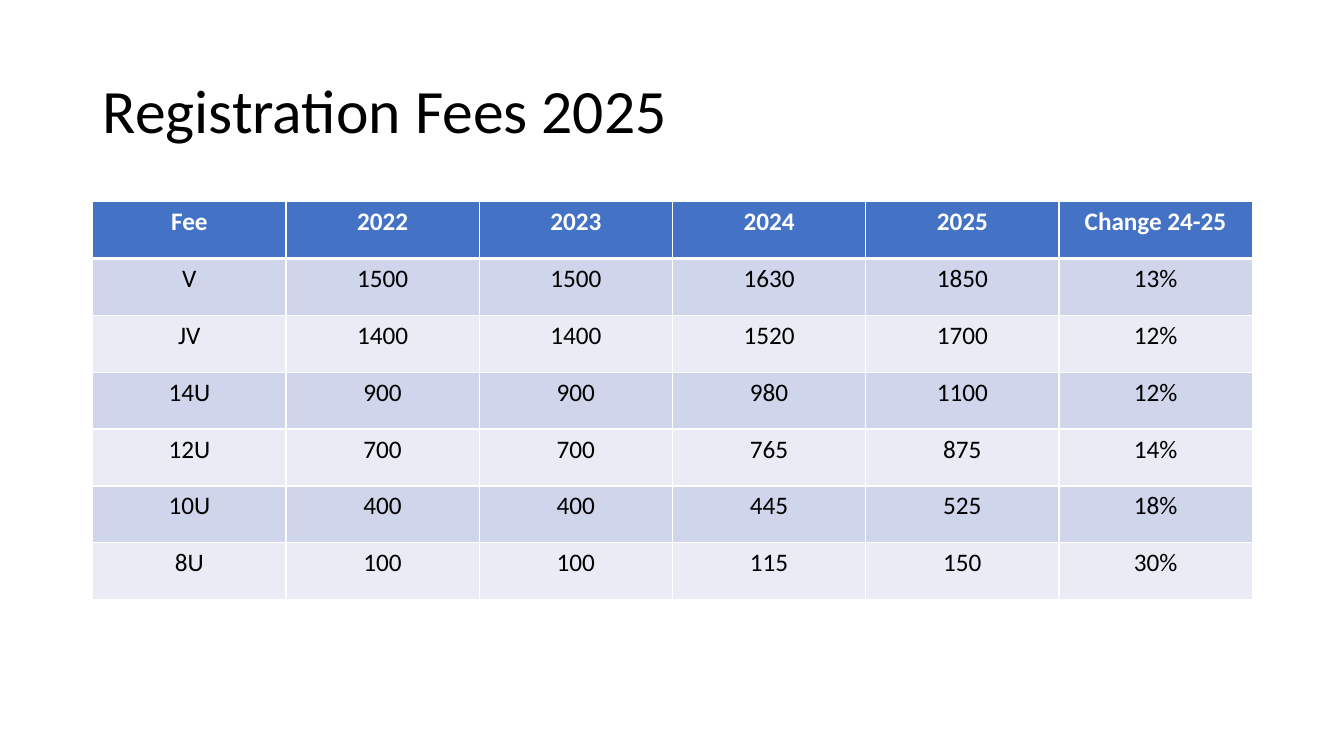
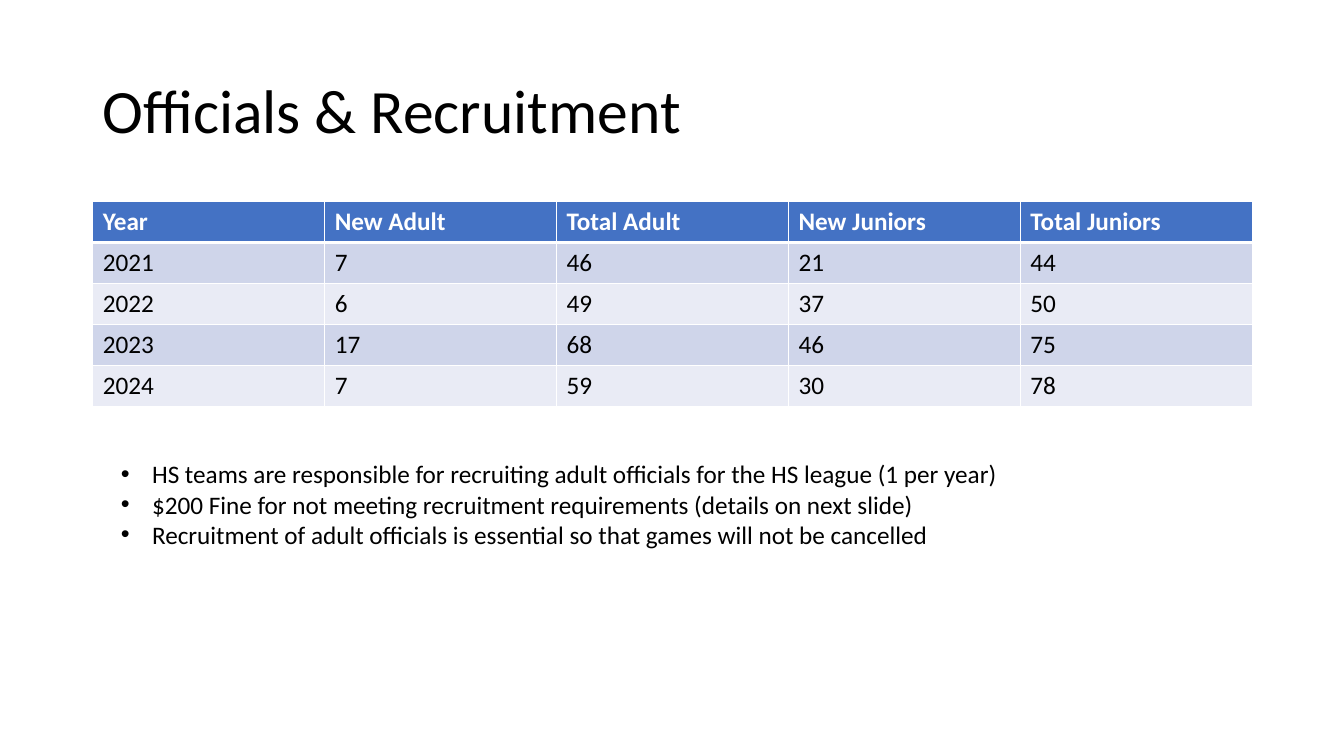
"""Build two slides on registration fees and officials."""
from lxml import etree
from pptx import Presentation, util as u
from pptx.dml import color
from pptx.enum import text
from pptx.oxml import ns

HUES = {"head": "4472C4", "odd": "CFD5EA", "even": "E9EBF5",
        "ink": "000000", "paper": "FFFFFF"}
BASE = {"name": "Calibri", "size": u.Pt(18), "bold": False}
TITLE = {**BASE, "size": u.Pt(44)}
HEAD = {**BASE, "bold": True}
LEFT, WIDE = 0.92, 11.5

FEES = [
    ["Fee", "2022", "2023", "2024", "2025", "Change 24-25"],
    ["V", "1500", "1500", "1630", "1850", "13%"],
    ["JV", "1400", "1400", "1520", "1700", "12%"],
    ["14U", "900", "900", "980", "1100", "12%"],
    ["12U", "700", "700", "765", "875", "14%"],
    ["10U", "400", "400", "445", "525", "18%"],
    ["8U", "100", "100", "115", "150", "30%"],
]
STAFF = [
    ["Year", "New Adult", "Total Adult", "New Juniors", "Total Juniors"],
    ["2021", "7", "46", "21", "44"],
    ["2022", "6", "49", "37", "50"],
    ["2023", "17", "68", "46", "75"],
    ["2024", "7", "59", "30", "78"],
]
NOTES = [
    "HS teams are responsible for recruiting adult officials for the HS league (1 per year)",
    "$200 Fine for not meeting recruitment requirements (details on next slide)",
    "Recruitment of adult officials is essential so that games will not be cancelled",
]


def rgb(key):
    """Return the named colour."""
    return color.RGBColor.from_string(HUES[key])


def style(para, form, hue="ink"):
    """Apply font values and a colour to a paragraph."""
    for key, val in form.items():
        setattr(para.font, key, val)
    para.font.color.rgb = rgb(hue)


def add_box(slide, left, top, wide, high):
    """Add a wrapping text box and return its frame."""
    frame = slide.shapes.add_textbox(*map(u.Inches, (left, top, wide, high))).text_frame
    frame.word_wrap = True
    return frame


def add_title(slide, words):
    """Add the slide title."""
    frame = add_box(slide, LEFT, 0.4, WIDE, 1.45)
    frame.vertical_anchor = text.MSO_ANCHOR.MIDDLE
    para = frame.paragraphs[0]
    para.text = words
    para.line_spacing = 0.9
    style(para, TITLE)


def add_rule(cell, side, width):
    """Draw one white cell border."""
    line = etree.SubElement(cell._tc.get_or_add_tcPr(), ns.qn(f"a:ln{side}"),
                            w=str(u.Pt(width)))
    fill = etree.SubElement(line, ns.qn("a:solidFill"))
    etree.SubElement(fill, ns.qn("a:srgbClr"), val=HUES["paper"])


def fill_cell(cell, words, row, align):
    """Write and format one table cell."""
    for side in "LRTB":
        thick = (row, side) in ((0, "B"), (1, "T"))
        add_rule(cell, side, 3 if thick else 1)
    cell.fill.solid()
    cell.fill.fore_color.rgb = rgb("head" if row == 0 else "odd" if row % 2 else "even")
    cell.text = words
    para = cell.text_frame.paragraphs[0]
    para.alignment = align
    style(para, *((BASE, "ink") if row else (HEAD, "paper")))


def add_grid(slide, data, high, align):
    """Add a table with equal columns and rows."""
    rows, cols = len(data), len(data[0])
    grid = slide.shapes.add_table(
        rows, cols, *map(u.Inches, (LEFT, 2, WIDE, high))).table
    for row, line in enumerate(data):
        for col, words in enumerate(line):
            fill_cell(grid.cell(row, col), words, row, align)


def add_list(slide, items):
    """Add a bulleted list."""
    frame = add_box(slide, 1.1, 4.5, 11.18, 1.01)
    for num, words in enumerate(items):
        para = frame.add_paragraph() if num else frame.paragraphs[0]
        para.text = words
        props = para._p.get_or_add_pPr()
        for key, val in {"marL": 0.31, "indent": -0.31}.items():
            props.set(key, str(u.Inches(val)))
        etree.SubElement(props, ns.qn("a:buFont"), typeface="Arial")
        etree.SubElement(props, ns.qn("a:buChar"), char="•")
        style(para, BASE)


def add_slide(deck, title, data, high, align):
    """Add a slide with a title and a table."""
    slide = deck.slides.add_slide(deck.slide_layouts[6])
    add_title(slide, title)
    add_grid(slide, data, high, align)
    return slide


def main():
    """Build and save the deck."""
    deck = Presentation()
    deck.slide_width, deck.slide_height = u.Inches(13.33), u.Inches(7.5)
    add_slide(deck, "Registration Fees 2025", FEES, 3.95, text.PP_ALIGN.CENTER)
    slide = add_slide(deck, "Officials & Recruitment", STAFF, 2.03, text.PP_ALIGN.LEFT)
    add_list(slide, NOTES)
    deck.save("out.pptx")


if __name__ == "__main__":
    main()
